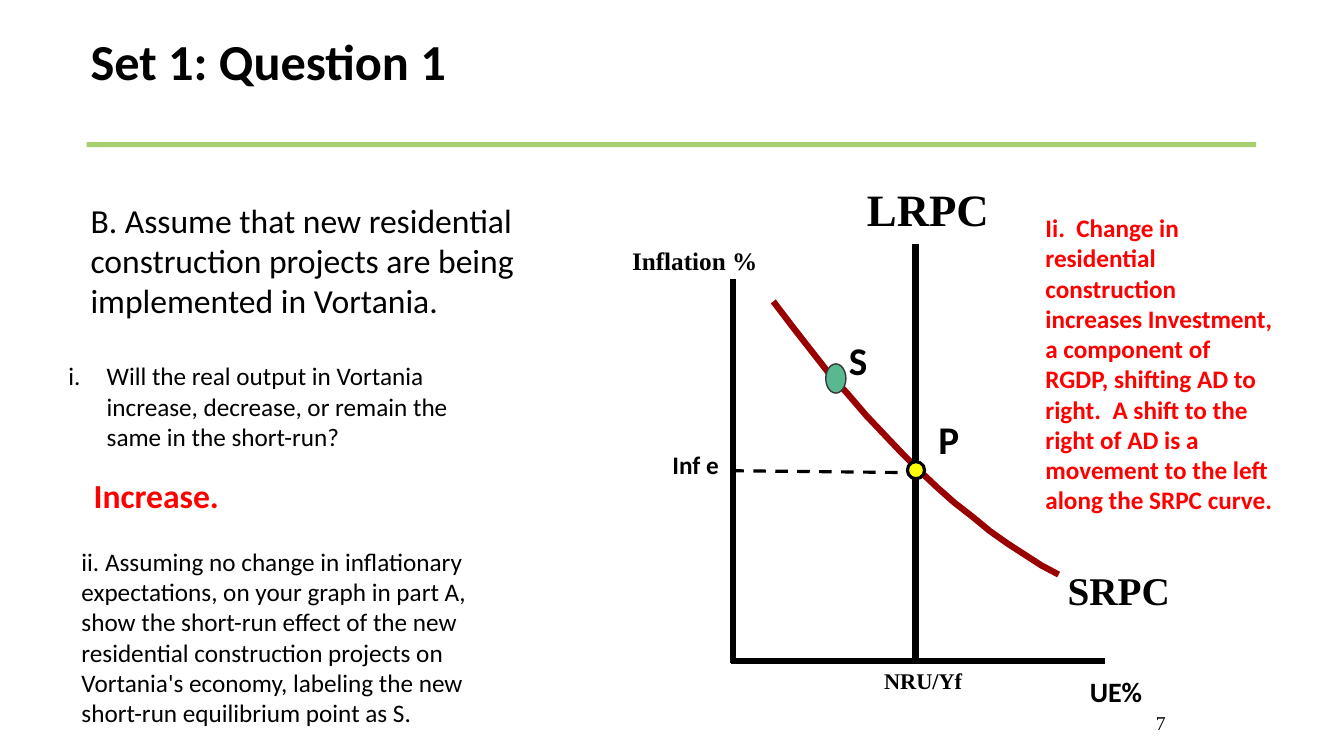
from dataclasses import dataclass

from lxml import etree
from pptx import Presentation
from pptx import util as u
from pptx.dml.color import RGBColor
from pptx.enum import dml, shapes, text
from pptx.oxml import ns

PX = 9144


@dataclass(frozen=True)
class Theme:
    black: str = "000000"
    answer: str = "FF0000"
    rule: str = "A7CE6F"
    curve: str = "990000"
    start_point: str = "FFFF00"
    new_point: str = "5AB890"
    new_point_edge: str = "36393B"
    sans: str = "Calibri"
    serif: str = "Times New Roman"
    title: int = 36
    long_run: int = 32
    point: int = 28
    lead: int = 24
    axis: int = 20
    body: int = 18
    small: int = 16
    number: int = 14


THEME = Theme()


def px(*lengths):
    return [u.Emu(length * PX) for length in lengths]


def write(frame, words, size=THEME.body, font=THEME.sans, color=THEME.black,
          bold=False, align=text.PP_ALIGN.LEFT, numbering=None, hang=0):
    paragraph = frame.paragraphs[0]
    paragraph.alignment = align
    if numbering:
        properties = paragraph._p.get_or_add_pPr()
        properties.set("marL", str(hang * PX))
        properties.set("indent", str(-hang * PX))
        etree.SubElement(properties, ns.qn("a:buAutoNum"), type=numbering)
    run = paragraph.add_run()
    run.text = words
    run.font.size = u.Pt(size)
    run.font.name = font
    run.font.bold = bold
    run.font.color.rgb = RGBColor.from_string(color)


class Deck:
    def __init__(self, width, height, theme):
        self.theme = theme
        self.file = Presentation()
        self.file.slide_width, self.file.slide_height = px(width, height)
        self.slide = self.file.slides.add_slide(self.file.slide_layouts[6])

    def label(self, words, left, top, width, height, middle=False, **style):
        box = self.slide.shapes.add_textbox(*px(left, top, width, height))
        frame = box.text_frame
        frame.word_wrap = True
        if middle:
            frame.vertical_anchor = text.MSO_ANCHOR.MIDDLE
        write(frame, words, **style)

    def outline(self, shape, color, weight):
        shape.line.color.rgb = RGBColor.from_string(color)
        shape.line.width = u.Pt(weight)

    def solid(self, kind, left, top, width, height, fill, edge=None, weight=1):
        shape = self.slide.shapes.add_shape(kind, *px(left, top, width, height))
        shape.shadow.inherit = False
        shape.fill.solid()
        shape.fill.fore_color.rgb = RGBColor.from_string(fill)
        if edge:
            self.outline(shape, edge, weight)
        else:
            shape.line.fill.background()

    def line(self, x1, y1, x2, y2, weight, dashed=False):
        connector = self.slide.shapes.add_connector(
            shapes.MSO_CONNECTOR.STRAIGHT, *px(x1, y1, x2, y2))
        self.outline(connector, self.theme.black, weight)
        if dashed:
            connector.line.dash_style = dml.MSO_LINE.DASH
        etree.SubElement(connector._element.spPr, ns.qn("a:effectLst"))

    def curve(self, start, bend, end, color, weight, steps=16):
        points = []
        for step in range(steps + 1):
            t = step / steps
            points.append(tuple(
                round((1 - t) ** 2 * a + 2 * t * (1 - t) * b + t ** 2 * c)
                for a, b, c in zip(start, bend, end)))
        builder = self.slide.shapes.build_freeform(*points[0], scale=PX)
        builder.add_line_segments(points[1:], close=False)
        shape = builder.convert_to_shape()
        shape.shadow.inherit = False
        shape.fill.background()
        self.outline(shape, color, weight)


def draw_graph(deck):
    theme = deck.theme
    serif = dict(font=theme.serif, bold=True)
    oval = shapes.MSO_SHAPE.OVAL
    deck.line(727, 277, 727, 658, 4)
    deck.line(725, 656, 1096, 656, 4)
    deck.label("Inflation %", 617, 230, 192, 57, middle=True, **serif)
    deck.curve((767, 299), (916, 500), (1050, 570), theme.curve, 4.5)
    deck.label("SRPC", 1049, 557, 146, 57, size=theme.point, **serif)
    deck.line(908, 242, 908, 658, 4.5)
    deck.line(912, 469, 725, 467, 2.25, dashed=True)
    deck.label("NRU/Yf", 867, 657, 136, 43, size=theme.small, **serif)
    deck.label("LRPC", 850, 175, 200, 63, size=theme.long_run, **serif)
    deck.solid(oval, 900, 458, 17, 17, theme.start_point, theme.black, 2.25)
    deck.label("UE%", 1071, 664, 138, 44, size=theme.axis, bold=True)
    deck.label("P", 921, 407, 60, 57, size=theme.point, bold=True)
    deck.label("Inf e", 657, 441, 75, 40, bold=True)
    deck.solid(oval, 819, 361, 20, 29, theme.new_point, theme.new_point_edge)
    deck.label("S", 832, 329, 40, 57, size=theme.point, bold=True)


def draw_question(deck):
    theme = deck.theme
    answer = dict(color=theme.answer, bold=True)
    deck.label("Set 1: Question 1", 80, 25, 567, 71, size=theme.title, bold=True)
    deck.label("B. Assume that new residential construction projects are being "
               "implemented in Vortania.", 80, 193, 533, 131, size=theme.lead)
    deck.label("Will the real output in Vortania increase, decrease, or remain "
               "the same in the short-run?", 58, 353, 455, 101,
               numbering="romanLcPeriod", hang=38)
    deck.label("Increase.", 83, 466, 388, 50, size=theme.lead, **answer)
    deck.label("ii. Assuming no change in inflationary expectations, on your "
               "graph in part A, show the short-run effect of the new "
               "residential construction projects on Vortania's economy, "
               "labeling the new short-run equilibrium point as S.",
               71, 537, 417, 192)
    deck.label("Ii.  Change in residential construction increases Investment, "
               "a component of RGDP, shifting AD to right.  A shift to the "
               "right of AD is a movement to the left along the SRPC curve.",
               1027, 206, 250, 313, **answer)


def main():
    deck = Deck(1333, 750, THEME)
    deck.solid(shapes.MSO_SHAPE.RECTANGLE, 86, 141, 1160, 5, THEME.rule)
    deck.label("7", 958, 700, 208, 50, size=THEME.number, font=THEME.serif,
               align=text.PP_ALIGN.RIGHT)
    draw_graph(deck)
    draw_question(deck)
    deck.file.save("out.pptx")


if __name__ == "__main__":
    main()
